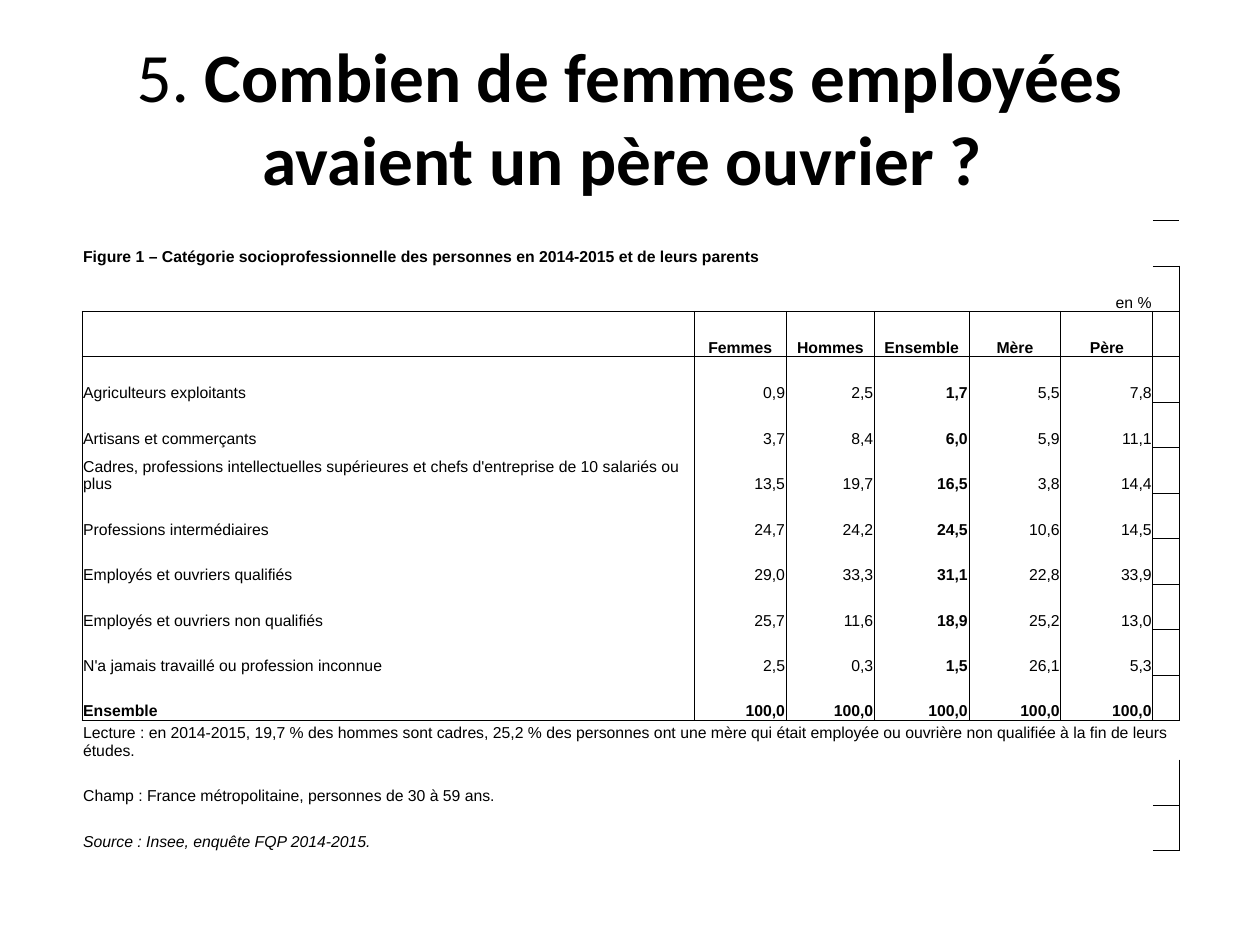
from dataclasses import dataclass

from lxml import etree
from pptx import Presentation
from pptx import util as u
from pptx.dml.color import RGBColor
from pptx.enum import text
from pptx.oxml import ns


@dataclass(frozen=True)
class Theme:
    """Colours, fonts and type sizes of the slide."""
    ink: str = "000000"
    head: str = "Calibri"
    body: str = "Arial"
    big: float = 39.6
    small: float = 9
    rule: float = 0.5


T = Theme()
WIDE, HIGH = 10, 7.5
COLS = [4.86, 0.73, 0.7, 0.75, 0.73, 0.73, 0.21]
LAST = len(COLS) - 1
TOP, TALL, SLIM = 1.75, 5, 0.31
HEAD, TOTAL, NOTE = 2, 10, 11
ROWS = [
    ["Figure 1 – Catégorie socioprofessionnelle des personnes en 2014-2015 et de leurs parents"],
    ["", "", "", "", "", "en\u00a0%"],
    ["", "Femmes", "Hommes", "Ensemble", "Mère", "Père"],
    ["Agriculteurs exploitants", "0,9", "2,5", "1,7", "5,5", "7,8"],
    ["Artisans et commerçants", "3,7", "8,4", "6,0", "5,9", "11,1"],
    ["Cadres, professions intellectuelles supérieures et chefs d'entreprise de 10 salariés ou plus",
     "13,5", "19,7", "16,5", "3,8", "14,4"],
    ["Professions intermédiaires", "24,7", "24,2", "24,5", "10,6", "14,5"],
    ["Employés et ouvriers qualifiés", "29,0", "33,3", "31,1", "22,8", "33,9"],
    ["Employés et ouvriers non qualifiés", "25,7", "11,6", "18,9", "25,2", "13,0"],
    ["N'a jamais travaillé ou profession inconnue", "2,5", "0,3", "1,5", "26,1", "5,3"],
    ["Ensemble"] + ["100,0"] * 5,
    ["Lecture\u00a0: en 2014-2015, 19,7\u00a0% des hommes sont cadres, 25,2\u00a0% des personnes "
     "ont une mère qui était employée ou ouvrière non qualifiée à la fin de leurs études."],
    ["Champ\u00a0: France métropolitaine, personnes de 30 à 59 ans."],
    ["Source\u00a0: Insee, enquête FQP 2014-2015."],
]


def write(para, words, size=T.small, face=T.body, bold=False, slant=False, align="LEFT"):
    """Add a formatted run to a paragraph."""
    para.alignment = getattr(text.PP_ALIGN, align)
    run = para.add_run()
    run.text = words
    font = run.font
    font.size, font.name, font.bold, font.italic = u.Pt(size), face, bold, slant
    font.color.rgb = RGBColor.from_string(T.ink)


def title(slide):
    """Draw the centred title."""
    box = slide.shapes.add_textbox(*map(u.Inches, (0.05 * WIDE, 0.04 * HIGH, 0.9 * WIDE, 1.25)))
    frame = box.text_frame
    frame.word_wrap = True
    frame.vertical_anchor = text.MSO_ANCHOR.MIDDLE
    for words, bold in (("5.", False), (" Combien de femmes employées avaient un père ouvrier\u00a0? ", True)):
        write(frame.paragraphs[0], words, size=T.big, face=T.head, bold=bold, align="CENTER")


def across(row, col):
    """Tell whether a rule runs above this cell."""
    return row != NOTE + 1 if col == LAST else row in (HEAD, HEAD + 1, NOTE)


def down(row, col):
    """Tell whether a rule runs left of this cell."""
    return row not in (0, NOTE) if col > LAST else HEAD <= row <= TOTAL


def edge(cell, row, col):
    """Set the four borders of a cell."""
    props = cell._tc.get_or_add_tcPr()
    sides = {"L": down(row, col), "R": down(row, col + 1),
             "T": across(row, col), "B": across(row + 1, col)}
    for side, shown in sides.items():
        line = etree.SubElement(props, ns.qn("a:ln" + side), w=str(u.Pt(T.rule)))
        fill = etree.SubElement(line, ns.qn("a:solidFill" if shown else "a:noFill"))
        if shown:
            etree.SubElement(fill, ns.qn("a:srgbClr"), val=T.ink)


def style(row, col):
    """Give the text format of a cell from its place."""
    body = HEAD < row <= TOTAL
    return {
        "bold": row in (0, HEAD, TOTAL) or (body and col == 3),
        "slant": row == len(ROWS) - 1,
        "align": "LEFT" if col == 0 else "CENTER" if row == HEAD else "RIGHT",
    }


def grid(slide):
    """Draw the table with its heading and notes."""
    size = len(ROWS), len(COLS)
    place = map(u.Inches, (0.65, TOP, sum(COLS), TALL))
    table = slide.shapes.add_table(*size, *place).table
    table.first_row = table.horz_banding = False
    for col, wide in zip(table.columns, COLS):
        col.width = u.Inches(wide)
    step = (TALL - SLIM) / (len(ROWS) - 1)
    for row, line in enumerate(ROWS):
        table.rows[row].height = u.Inches(SLIM if row == NOTE else step)
        for col in range(len(COLS)):
            cell = table.cell(row, col)
            edge(cell, row, col)
            cell.fill.background()
            cell.vertical_anchor = text.MSO_ANCHOR.BOTTOM
            cell.margin_left = cell.margin_right = cell.margin_top = u.Inches(0.01)
            cell.margin_bottom = 0
            words = line[col] if col < len(line) else ""
            write(cell.text_frame.paragraphs[0], words, **style(row, col))
    for row, end in ((0, 1), (NOTE, LAST)):
        table.cell(row, 0).merge(table.cell(row, end))


def main():
    """Build and save the slide."""
    deck = Presentation()
    deck.slide_width, deck.slide_height = u.Inches(WIDE), u.Inches(HIGH)
    slide = deck.slides.add_slide(deck.slide_layouts[6])
    title(slide)
    grid(slide)
    deck.save("out.pptx")


if __name__ == "__main__":
    main()
